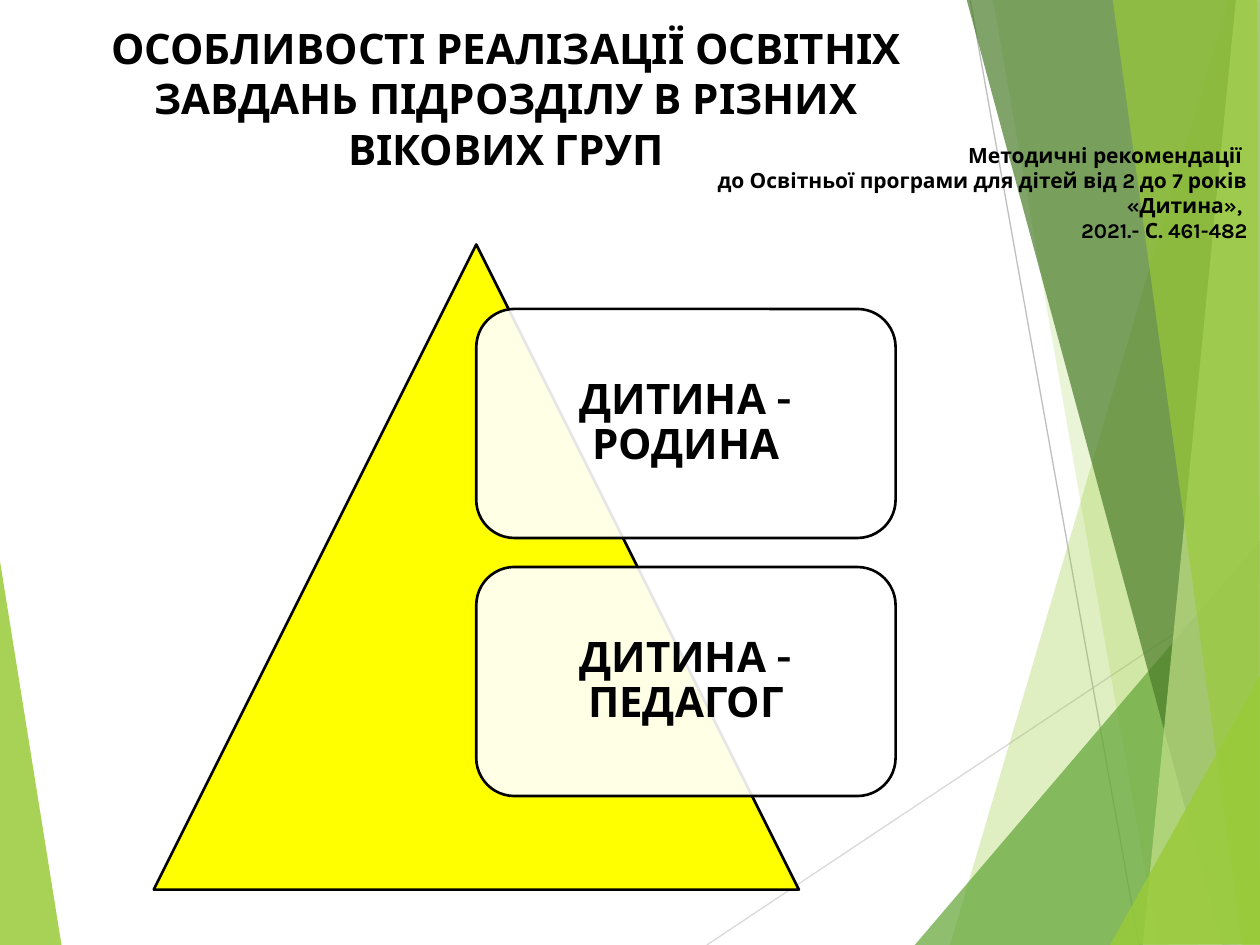
from lxml.etree import SubElement
from pptx import Presentation
from pptx.dml.color import RGBColor
from pptx.enum.shapes import MSO_CONNECTOR as Connector, MSO_SHAPE as Shape
from pptx.enum.text import MSO_ANCHOR as Anchor, PP_ALIGN as Align
from pptx.oxml.ns import qn
from pptx.util import Inches, Pt

FONT = "Karla"
BLACK = RGBColor(0x00, 0x00, 0x00)
WHITE = RGBColor(0xFF, 0xFF, 0xFF)
YELLOW = RGBColor(0xFF, 0xFF, 0x00)
LIME = RGBColor(0x99, 0xCB, 0x38)
PALE_LIME = RGBColor(0xC2, 0xE0, 0x88)
GREEN = RGBColor(0x63, 0xA5, 0x37)
DARK_GREEN = RGBColor(0x4A, 0x7C, 0x29)
LIGHT_GRAY = RGBColor(0xD9, 0xD9, 0xD9)
GRAY = RGBColor(0xBF, 0xBF, 0xBF)

LEFT_FACET = [(-0.01, 4.39), (0.49, 7.51), (-0.01, 7.5)]
RAYS = [
    ((5.61, 7.5), (10.01, 4.57), LIGHT_GRAY),
    ((7.7, 0), (9.04, 7.5), GRAY),
]
RIGHT_FACETS = [
    ([(9.75, 0), (7.54, 7.5), (10.02, 7.51), (10.01, 0.01)], LIME, 30),
    ([(7.88, -0.01), (9.19, 7.5), (10.01, 7.5), (10.01, -0.01)], LIME, 20),
    ([(7.26, 7.5), (10, 4.29), (10.01, 7.5)], GREEN, 72),
    ([(7.67, -0.01), (9.7, 7.5), (10.01, 7.49), (10.01, -0.01)], DARK_GREEN, 70),
    ([(9.81, -0.01), (9.07, 7.5), (10.01, 7.5), (10, -0.01)], PALE_LIME, 70),
    ([(8.83, -0.01), (9.86, 7.5), (10, 7.5), (9.98, -0.01)], LIME, 65),
    ([(8.81, 7.5), (10.01, 5.35), (10.01, 7.49)], LIME, 80),
]
TITLE = "ОСОБЛИВОСТІ РЕАЛІЗАЦІЇ ОСВІТНІХ ЗАВДАНЬ ПІДРОЗДІЛУ В РІЗНИХ ВІКОВИХ ГРУП"
REFERENCE = [
    "Методичні рекомендації ",
    "до Освітньої програми для дітей від 2 до 7 років «Дитина», ",
    "2021.- С. 461-482",
]
RELATIONS = ["ДИТИНА - РОДИНА", "ДИТИНА - ПЕДАГОГ"]


def fill_shape(shape, color, opacity=100):
    """Give a shape a flat fill of the given opacity in percent."""
    shape.shadow.inherit = False
    shape.fill.solid()
    shape.fill.fore_color.rgb = color
    if opacity < 100:
        color_element = shape.fill._xPr.find(qn("a:solidFill"))[0]
        SubElement(color_element, qn("a:alpha"), val=str(opacity * 1000))


def outline_shape(shape):
    """Draw the black outline of the diagram parts."""
    shape.line.color.rgb = BLACK
    shape.line.width = Pt(1.5)


def write_paragraphs(frame, lines, size, alignment, spacing=None):
    """Write bold black paragraphs into a text frame."""
    frame.word_wrap = True
    for index, line in enumerate(lines):
        paragraph = frame.add_paragraph() if index else frame.paragraphs[0]
        paragraph.alignment = alignment
        if spacing:
            paragraph.line_spacing = spacing
        run = paragraph.add_run()
        run.text = line
        run.font.name = FONT
        run.font.size = Pt(size)
        run.font.bold = True
        run.font.color.rgb = BLACK


def add_text(slide, box, lines, size, alignment):
    """Place a text box in the given box."""
    textbox = slide.shapes.add_textbox(*map(Inches, box))
    write_paragraphs(textbox.text_frame, lines, size, alignment)


def add_facet(slide, points, color, opacity):
    """Place one translucent polygon of the backdrop."""
    corners = [(Inches(x), Inches(y)) for x, y in points]
    builder = slide.shapes.build_freeform(*corners[0])
    builder.add_line_segments(corners[1:], close=True)
    facet = builder.convert_to_shape()
    fill_shape(facet, color, opacity)
    facet.line.fill.background()


def add_ray(slide, start, end, color):
    """Place one thin line of the backdrop."""
    ray = slide.shapes.add_connector(
        Connector.STRAIGHT, *map(Inches, (*start, *end)))
    ray.line.color.rgb = color
    ray.line.width = Pt(0.75)
    SubElement(ray._element.spPr, qn("a:effectLst"))


def add_backdrop(slide):
    """Place the facets and rays along the slide edges."""
    add_facet(slide, LEFT_FACET, LIME, 85)
    for ray in RAYS:
        add_ray(slide, *ray)
    for facet in RIGHT_FACETS:
        add_facet(slide, *facet)


def add_pyramid(slide, left, top, side):
    """Place the triangle with its stacked labels in a square box."""
    triangle = slide.shapes.add_shape(
        Shape.ISOSCELES_TRIANGLE, *map(Inches, (left, top, side, side)))
    fill_shape(triangle, YELLOW)
    outline_shape(triangle)
    width, height, pitch = side * 0.65, side * 0.355, side * 0.4
    for index, relation in enumerate(RELATIONS):
        box = (left + side / 2, top + side * 0.1 + index * pitch, width, height)
        card = slide.shapes.add_shape(
            Shape.ROUNDED_RECTANGLE, *map(Inches, box))
        fill_shape(card, WHITE, 90)
        outline_shape(card)
        frame = card.text_frame
        frame.vertical_anchor = Anchor.MIDDLE
        frame.margin_left = frame.margin_right = Inches(0.1)
        frame.margin_top = frame.margin_bottom = Inches(0.1)
        write_paragraphs(frame, [relation], 24, Align.CENTER, 0.9)


def main():
    """Build and save the slide."""
    presentation = Presentation()
    presentation.slide_width = Inches(10)
    presentation.slide_height = Inches(7.5)
    slide = presentation.slides.add_slide(presentation.slide_layouts[6])
    add_backdrop(slide)
    add_text(slide, (0.59, 0.13, 6.85, 1.31), [TITLE], 24, Align.CENTER)
    add_pyramid(slide, 1.22, 1.94, 5.12)
    add_text(slide, (5, 1.08, 5, 1.21), REFERENCE, 12, Align.RIGHT)
    presentation.save("out.pptx")


if __name__ == "__main__":
    main()
